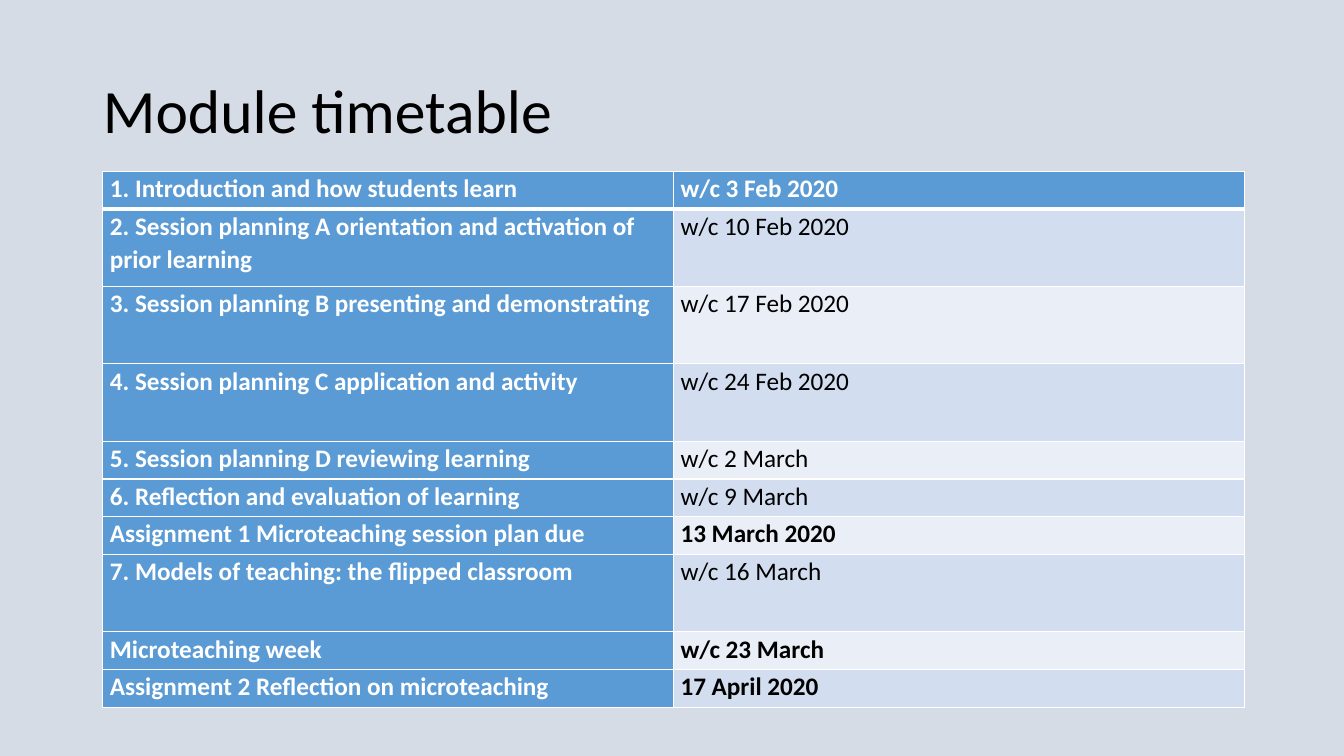
from dataclasses import dataclass

from lxml import etree
from pptx import Presentation
from pptx import util as u
from pptx.dml.color import RGBColor
from pptx.enum import text
from pptx.oxml.ns import qn


@dataclass(frozen=True)
class Theme:
    font: str = "Calibri"
    title_size: int = 44
    body_size: int = 18
    rule: float = 1
    header_rule: float = 3
    backdrop: str = "D6DCE5"
    accent: str = "5B9BD5"
    bands: tuple = ("EAEFF7", "D2DEEF")
    dark: str = "000000"
    light: str = "FFFFFF"


THEME = Theme()
WIDTH, HEIGHT = u.Inches(13.33), u.Inches(7.5)
TALL_TO_SHORT = 2.05
TALL_SESSIONS = {1, 2, 3, 7}
DEADLINES = {0, 6, 8, 9}
TIMETABLE = [
    ("1. Introduction and how students learn", "w/c 3 Feb 2020"),
    ("2. Session planning A orientation and activation of prior learning", "w/c 10 Feb 2020"),
    ("3. Session planning B presenting and demonstrating", "w/c 17 Feb 2020"),
    ("4. Session planning C application and activity", "w/c 24 Feb 2020"),
    ("5. Session planning D reviewing learning", "w/c 2 March"),
    ("6. Reflection and evaluation of learning", "w/c 9 March"),
    ("Assignment 1 Microteaching session plan due", "13 March 2020"),
    ("7. Models of teaching: the flipped classroom", "w/c 16 March"),
    ("Microteaching week", "w/c 23 March"),
    ("Assignment 2 Reflection on microteaching", "17 April 2020"),
]


def apply(target, values):
    for name, value in values.items():
        setattr(target, name, value)


def write(frame, words, size, color, bold, spacing):
    frame.text = words
    line = frame.paragraphs[0]
    apply(line, {"alignment": text.PP_ALIGN.LEFT, "line_spacing": spacing})
    font = line.runs[0].font
    apply(font, {"name": THEME.font, "size": u.Pt(size), "bold": bold})
    font.color.rgb = RGBColor.from_string(color)


def draw_borders(cell, widths):
    properties = cell._tc.get_or_add_tcPr()
    for side, width in widths.items():
        border = etree.SubElement(properties, qn(f"a:ln{side}"), w=str(u.Pt(width)))
        fill = etree.SubElement(border, qn("a:solidFill"))
        etree.SubElement(fill, qn("a:srgbClr"), val=THEME.light)


def format_cell(cell, words, row, is_date):
    on_accent = row == 0 or not is_date
    apply(cell, {
        "margin_left": u.Inches(0.07), "margin_right": u.Inches(0.07),
        "margin_top": 0, "margin_bottom": 0,
        "vertical_anchor": text.MSO_ANCHOR.TOP,
    })
    draw_borders(cell, {
        "L": THEME.rule,
        "R": THEME.rule,
        "T": THEME.header_rule if row == 1 else THEME.rule,
        "B": THEME.header_rule if row == 0 else THEME.rule,
    })
    cell.fill.solid()
    cell.fill.fore_color.rgb = RGBColor.from_string(
        THEME.accent if on_accent else THEME.bands[row % 2])
    write(cell.text_frame, words, THEME.body_size,
          THEME.light if on_accent else THEME.dark,
          not is_date or row in DEADLINES, 1.07)


def add_title(slide, words):
    title = slide.shapes.title
    apply(title, {
        "left": u.Inches(0.92), "top": u.Inches(0.4),
        "width": u.Inches(11.5), "height": u.Inches(1.45),
    })
    apply(title.text_frame, {
        "vertical_anchor": text.MSO_ANCHOR.MIDDLE,
        "auto_size": text.MSO_AUTO_SIZE.NONE, "word_wrap": True,
    })
    write(title.text_frame, words, THEME.title_size, THEME.dark, False, 0.9)


def add_timetable(slide, sessions):
    height = u.Inches(5.32)
    timetable = slide.shapes.add_table(
        len(sessions), 2, u.Inches(1.02), u.Inches(1.7), u.Inches(11.32), height).table
    shares = [TALL_TO_SHORT if row in TALL_SESSIONS else 1 for row in range(len(sessions))]
    for row, session in enumerate(sessions):
        timetable.rows[row].height = round(height * shares[row] / sum(shares))
        for column, words in enumerate(session):
            format_cell(timetable.cell(row, column), words, row, column == 1)


def main():
    deck = Presentation()
    apply(deck, {"slide_width": WIDTH, "slide_height": HEIGHT})
    slide = deck.slides.add_slide(deck.slide_layouts.get_by_name("Title Only"))
    slide.background.fill.solid()
    slide.background.fill.fore_color.rgb = RGBColor.from_string(THEME.backdrop)
    add_title(slide, "Module timetable")
    add_timetable(slide, TIMETABLE)
    deck.save("out.pptx")


if __name__ == "__main__":
    main()
